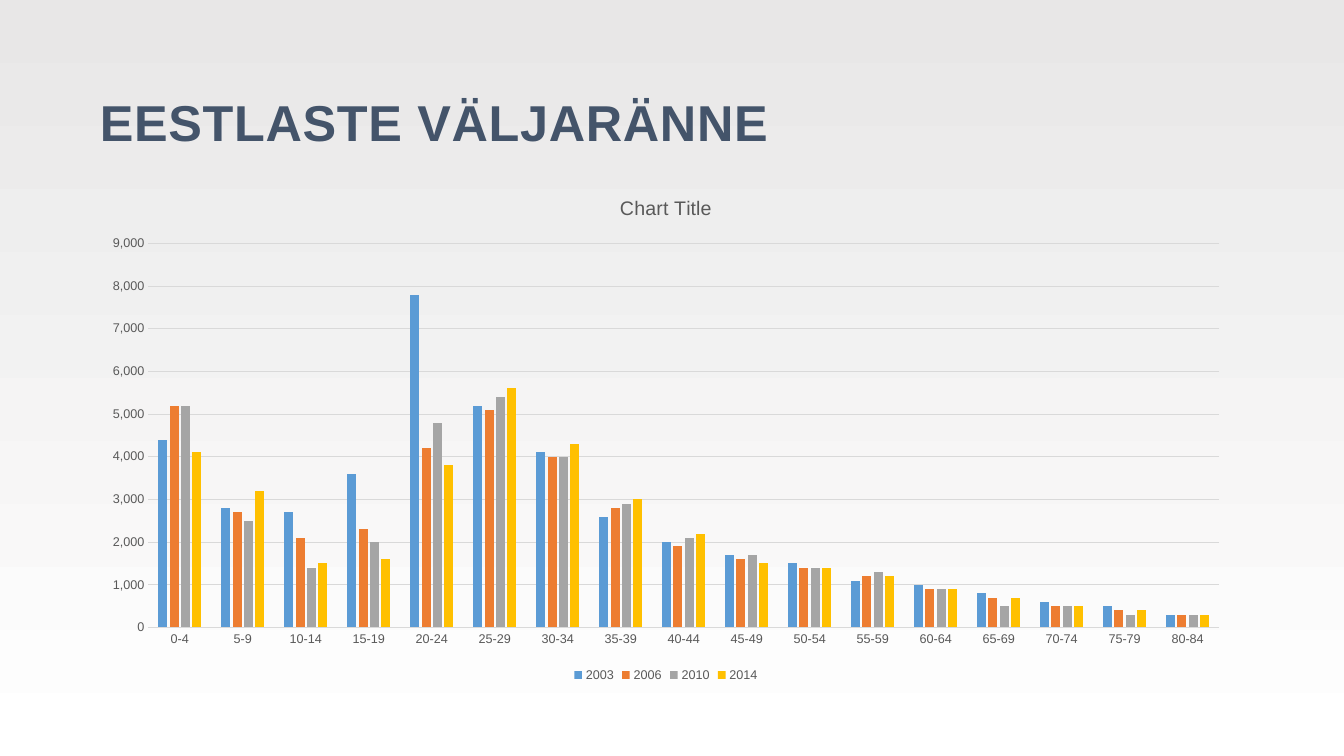
from pptx import Presentation
from pptx.chart.data import CategoryChartData
from pptx.dml.color import RGBColor
from pptx.enum.chart import XL_CHART_TYPE, XL_LEGEND_POSITION, XL_TICK_MARK
from pptx.enum.text import MSO_ANCHOR, MSO_AUTO_SIZE, PP_ALIGN
from pptx.util import Inches, Pt

COLORS = {
    "top": "E8E7E7", "bottom": "FFFFFF", "heading": "44546A",
    "label": "595959", "grid": "D9D9D9", "text": "000000",
    "2003": "5B9BD5", "2006": "ED7D31", "2010": "A5A5A5", "2014": "FFC000",
}
AGE_GROUPS = [f"{age}-{age + 4}" for age in range(0, 85, 5)]
EMIGRANTS = {
    "2003": [4400, 2800, 2700, 3600, 7800, 5200, 4100, 2600, 2000,
             1700, 1500, 1100, 1000, 800, 600, 500, 300],
    "2006": [5200, 2700, 2100, 2300, 4200, 5100, 4000, 2800, 1900,
             1600, 1400, 1200, 900, 700, 500, 400, 300],
    "2010": [5200, 2500, 1400, 2000, 4800, 5400, 4000, 2900, 2100,
             1700, 1400, 1300, 900, 500, 500, 300, 300],
    "2014": [4100, 3200, 1500, 1600, 3800, 5600, 4300, 3000, 2200,
             1500, 1400, 1200, 900, 700, 500, 400, 300],
}


class SlideBuilder:
    """Holds the font, the palette and the current slide."""

    def __init__(self, slide, font_name="Arial"):
        self.slide = slide
        self.font_name = font_name

    def color(self, name):
        return RGBColor.from_string(COLORS[name])

    def style(self, font, size, color, bold=False):
        font.name = self.font_name
        font.size = Pt(size)
        font.bold = bold
        font.color.rgb = self.color(color)

    def background(self):
        fill = self.slide.background.fill
        fill.gradient()
        fill.gradient_angle = 270
        for stop, name in zip(fill.gradient_stops, ("top", "bottom")):
            stop.color.rgb = self.color(name)

    def title(self, wording, left, top, width, height):
        heading = self.slide.shapes.title
        heading.left, heading.top = Inches(left), Inches(top)
        heading.width, heading.height = Inches(width), Inches(height)
        frame = heading.text_frame
        frame.word_wrap = True
        frame.auto_size = MSO_AUTO_SIZE.NONE
        frame.vertical_anchor = MSO_ANCHOR.BOTTOM
        paragraph = frame.paragraphs[0]
        paragraph.alignment = PP_ALIGN.LEFT
        run = paragraph.add_run()
        run.text = wording
        self.style(run.font, 36, "heading", bold=True)
        run.font._element.set("spc", "50")

    def column_chart(self, wording, categories, series, left, top, width, height):
        data = CategoryChartData(number_format="#,##0")
        data.categories = categories
        for year, counts in series.items():
            data.add_series(year, counts)
        chart = self.slide.shapes.add_chart(
            XL_CHART_TYPE.COLUMN_CLUSTERED, Inches(left), Inches(top),
            Inches(width), Inches(height), data).chart
        self.style(chart.font, 10, "text")

        chart.has_title = True
        run = chart.chart_title.text_frame.paragraphs[0].add_run()
        run.text = wording
        self.style(run.font, 14, "label")
        chart.chart_title.include_in_layout = False

        chart.has_legend = True
        chart.legend.position = XL_LEGEND_POSITION.BOTTOM
        chart.legend.include_in_layout = False
        self.style(chart.legend.font, 9, "label")

        plot = chart.plots[0]
        plot.gap_width, plot.overlap = 219, -27
        plot.vary_by_categories = False
        for columns in plot.series:
            columns.format.fill.solid()
            columns.format.fill.fore_color.rgb = self.color(columns.name)
            columns.invert_if_negative = False
        self.axes(chart)

    def axes(self, chart):
        ages, counts = chart.category_axis, chart.value_axis
        for axis in (ages, counts):
            axis.major_tick_mark = axis.minor_tick_mark = XL_TICK_MARK.NONE
            self.style(axis.tick_labels.font, 9, "label")
        counts.minimum_scale, counts.maximum_scale = 0, 9000
        counts.major_unit = 1000
        counts.tick_labels.number_format = "#,##0"
        counts.tick_labels.number_format_is_linked = False
        counts.format.line.fill.background()
        counts.has_major_gridlines = True
        for line in (ages.format.line, counts.major_gridlines.format.line):
            line.color.rgb = self.color("grid")
            line.width = Pt(0.75)


def main():
    deck = Presentation()
    deck.slide_width, deck.slide_height = Inches(13.33), Inches(7.5)
    builder = SlideBuilder(deck.slides.add_slide(deck.slide_layouts[5]))
    builder.background()
    builder.title("EESTLASTE VÄLJARÄNNE", 0.89, 0.3, 11.56, 1.25)
    builder.column_chart("Chart Title", AGE_GROUPS, EMIGRANTS,
                         0.89, 1.75, 11.43, 5.06)
    deck.save("out.pptx")


if __name__ == "__main__":
    main()
